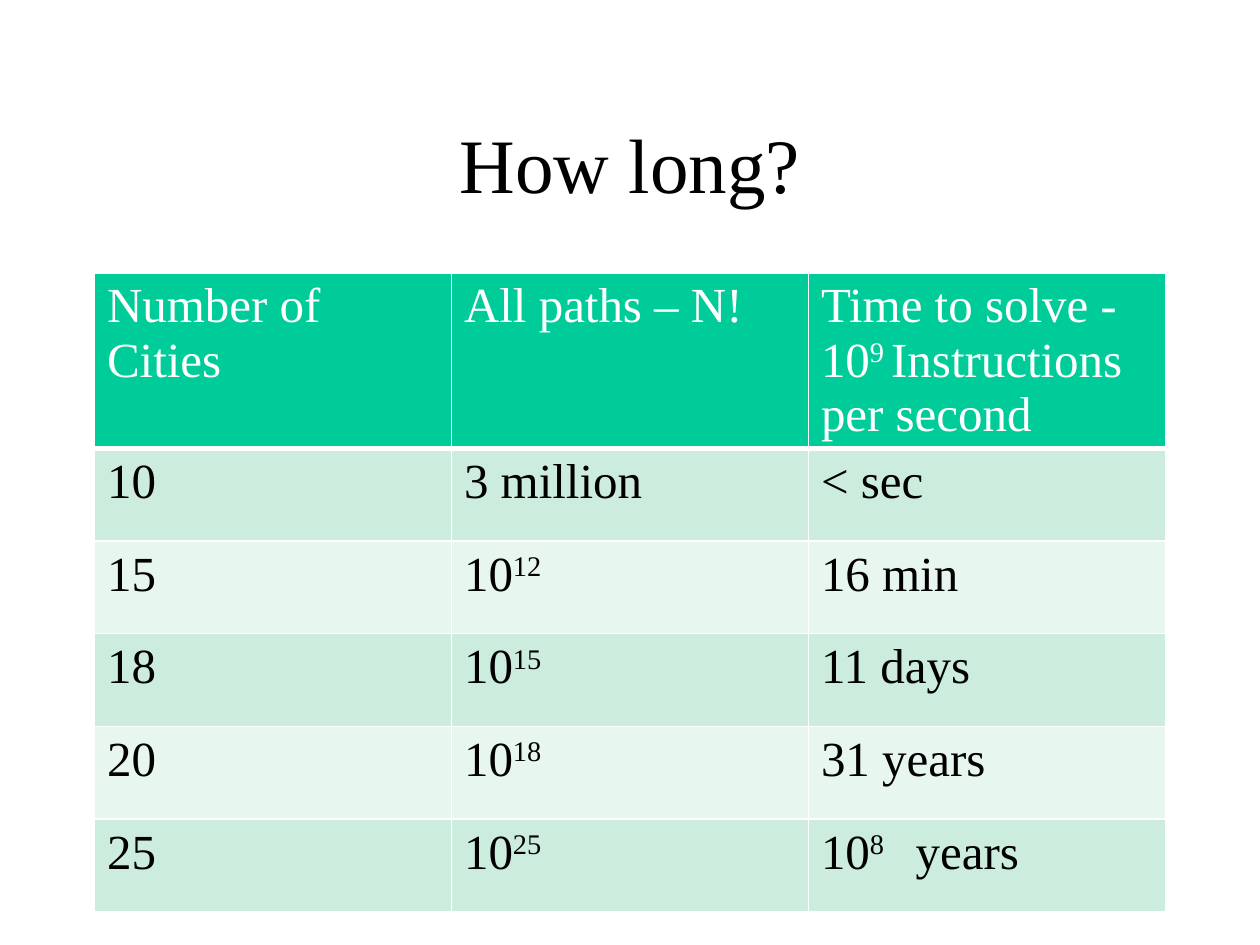
"""Build a slide with a table of travelling times for growing numbers of cities."""
from typing import NamedTuple

from lxml.etree import SubElement
from pptx import Presentation
from pptx.dml.color import RGBColor
from pptx.enum.text import MSO_ANCHOR, PP_ALIGN
from pptx.oxml.ns import qn
from pptx.util import Pt

FONT = "Times New Roman"
COLOURS = {
    "text": "000000",
    "header": "00CC99",
    "dark_band": "CCECDE",
    "light_band": "E7F6EF",
    "white": "FFFFFF",
}
LEFT, WIDTH = 54, 612
TABLE_TOP, ROW_HEIGHT = 156, 53
SUPERSCRIPT_MARK = "^"


class Row(NamedTuple):
    cities: str
    paths: str
    time: str


ROWS = [
    Row("Number of Cities", "All paths – N!", "Time to solve -\n10^9 ^Instructions per second"),
    Row("10", "3 million", "< sec"),
    Row("15", "10^12", "16 min"),
    Row("18", "10^15", "11 days"),
    Row("20", "10^18", "31 years"),
    Row("25", "10^25", "10^8 ^  years"),
]


def write_text(text_frame, text: str, *, size: float, colour: str, align=PP_ALIGN.LEFT) -> None:
    """Write one paragraph per line, raising the text between superscript marks."""
    for line_number, line in enumerate(text.split("\n")):
        paragraph = text_frame.add_paragraph() if line_number else text_frame.paragraphs[0]
        paragraph.alignment = align
        for part_number, part in enumerate(line.split(SUPERSCRIPT_MARK)):
            run = paragraph.add_run()
            run.text = part
            run.font.name = FONT
            run.font.size = Pt(size)
            run.font.bold = False
            run.font.color.rgb = RGBColor.from_string(COLOURS[colour])
            if part_number % 2:
                run.font._element.set("baseline", "30000")


def set_borders(cell, bottom_width: float) -> None:
    """Give a cell white borders, with its own width at the bottom."""
    properties = cell._tc.get_or_add_tcPr()
    for side, width in {"L": 1, "R": 1, "T": 1, "B": bottom_width}.items():
        line = SubElement(properties, qn(f"a:ln{side}"), w=str(Pt(width)))
        fill = SubElement(line, qn("a:solidFill"))
        SubElement(fill, qn("a:srgbClr"), val=COLOURS["white"])


def add_title(slide, text: str) -> None:
    """Place and format the title placeholder."""
    title = slide.shapes.title
    title.left, title.top, title.width, title.height = Pt(LEFT), Pt(48), Pt(WIDTH), Pt(90)
    title.text_frame.vertical_anchor = MSO_ANCHOR.MIDDLE
    write_text(title.text_frame, text, size=44, colour="text", align=PP_ALIGN.CENTER)


def add_table(slide, rows: list[Row]) -> None:
    """Add the table with a header and alternating bands."""
    table = slide.shapes.add_table(
        len(rows), len(Row._fields), Pt(LEFT), Pt(TABLE_TOP), Pt(WIDTH), Pt(ROW_HEIGHT * len(rows))
    ).table
    for row_number, row in enumerate(rows):
        is_header = row_number == 0
        band = "header" if is_header else "dark_band" if row_number % 2 else "light_band"
        for column_number, text in enumerate(row):
            cell = table.cell(row_number, column_number)
            set_borders(cell, bottom_width=3 if is_header else 1)
            cell.fill.solid()
            cell.fill.fore_color.rgb = RGBColor.from_string(COLOURS[band])
            write_text(cell.text_frame, text, size=28, colour="white" if is_header else "text")


def main() -> None:
    """Build and save the presentation."""
    presentation = Presentation()
    presentation.slide_width, presentation.slide_height = Pt(720), Pt(540)
    slide = presentation.slides.add_slide(presentation.slide_layouts[5])
    add_title(slide, "How long?")
    add_table(slide, ROWS)
    presentation.save("out.pptx")


if __name__ == "__main__":
    main()
